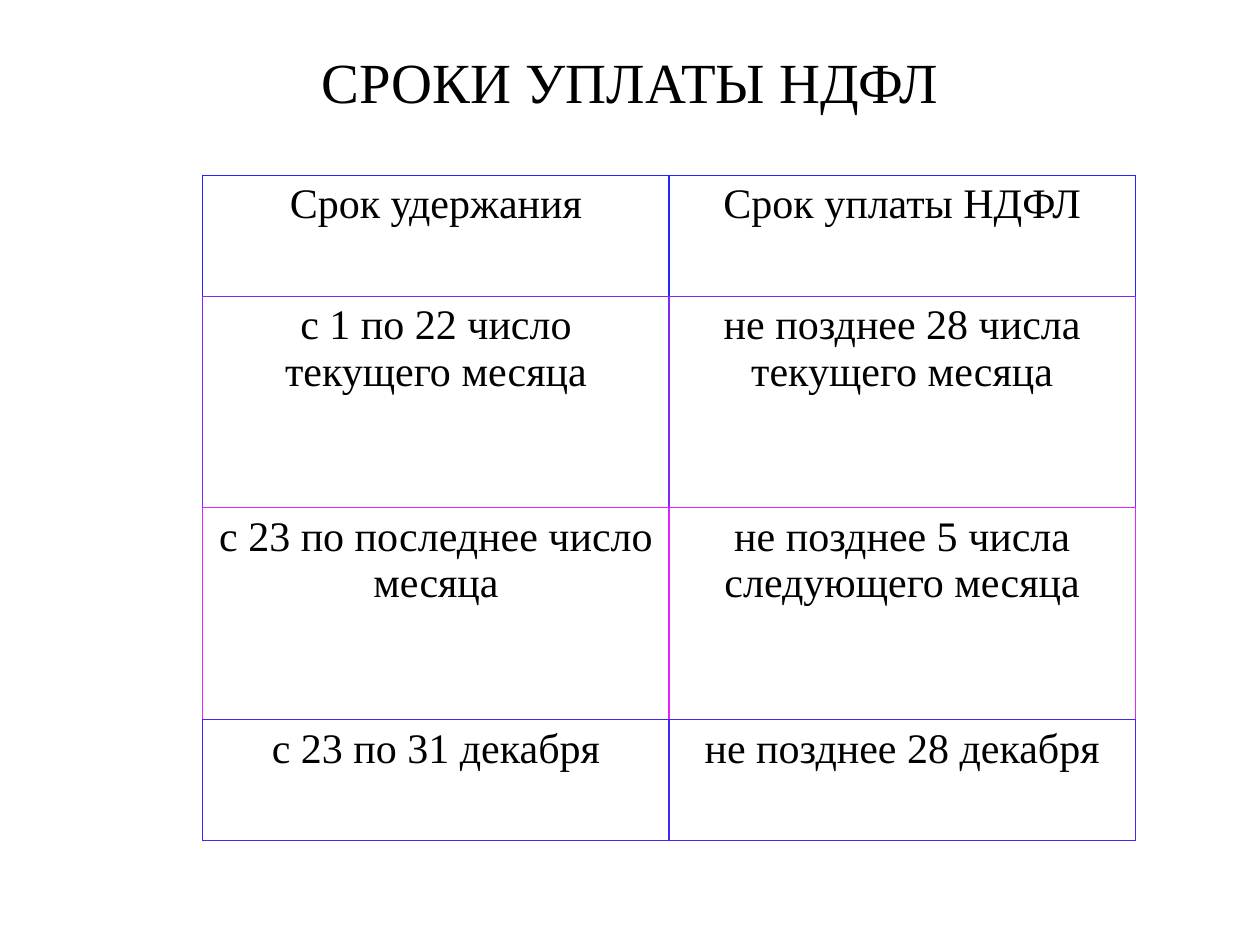
import pptx
import pptx.dml.color
import pptx.enum.text
import pptx.oxml
import pptx.oxml.ns
import pptx.util

Inches = pptx.util.Inches
FONT = "Times New Roman"
TITLE = "СРОКИ УПЛАТЫ НДФЛ"
ROWS = [
    ("Срок удержания", "Срок уплаты НДФЛ"),
    ("с 1 по 22 число текущего месяца", "не позднее 28 числа текущего месяца"),
    ("с 23 по последнее число месяца", "не позднее 5 числа следующего месяца"),
    ("с 23 по 31 декабря", "не позднее 28 декабря"),
]
ROW_HEIGHTS = [0.96, 1.68, 1.68, 0.96]
ROW_BORDERS = ["2027F9", "8027F9", "E027F9", "4028F9"]
COLUMN_WIDTH = 3.7


def color(value):
    return pptx.dml.color.RGBColor.from_string(value)


def write(frame, text, size):
    frame.text = text
    paragraph = frame.paragraphs[0]
    paragraph.alignment = pptx.enum.text.PP_ALIGN.CENTER
    font = paragraph.runs[0].font
    font.name = FONT
    font.size = pptx.util.Pt(size)
    font.color.rgb = color("000000")


def add_borders(cell, side_color, bottom_color):
    """Put the cell's lines ahead of its fill, as the schema asks."""
    sides = [("lnL", side_color), ("lnR", side_color),
             ("lnT", side_color), ("lnB", bottom_color)]
    for index, (tag, value) in enumerate(sides):
        line = pptx.oxml.parse_xml(
            f'<a:{tag} {pptx.oxml.ns.nsdecls("a")} w="{pptx.util.Pt(0.75)}">'
            f'<a:solidFill><a:srgbClr val="{value}"/></a:solidFill></a:{tag}>')
        cell._tc.get_or_add_tcPr().insert(index, line)


deck = pptx.Presentation()
deck.slide_width, deck.slide_height = Inches(10), Inches(7.5)
page = deck.slides.add_slide(deck.slide_layouts[6])

title = page.shapes.add_textbox(Inches(0.5), Inches(0.3), Inches(9), Inches(0.69))
title.text_frame.word_wrap = True
title.text_frame.vertical_anchor = pptx.enum.text.MSO_ANCHOR.MIDDLE
write(title.text_frame, TITLE, 32.4)

columns = len(ROWS[0])
table = page.shapes.add_table(
    len(ROWS), columns, Inches(1.61), Inches(1.39),
    Inches(COLUMN_WIDTH * columns), Inches(sum(ROW_HEIGHTS))).table
table.first_row = table.horz_banding = False
for column in table.columns:
    column.width = Inches(COLUMN_WIDTH)

bottom_borders = ROW_BORDERS[1:] + ROW_BORDERS[-1:]
for row_index, texts in enumerate(ROWS):
    table.rows[row_index].height = Inches(ROW_HEIGHTS[row_index])
    for column_index, text in enumerate(texts):
        cell = table.cell(row_index, column_index)
        write(cell.text_frame, text, 24)
        cell.fill.solid()
        cell.fill.fore_color.rgb = color("FFFFFF")
        add_borders(cell, ROW_BORDERS[row_index], bottom_borders[row_index])

deck.save("out.pptx")
